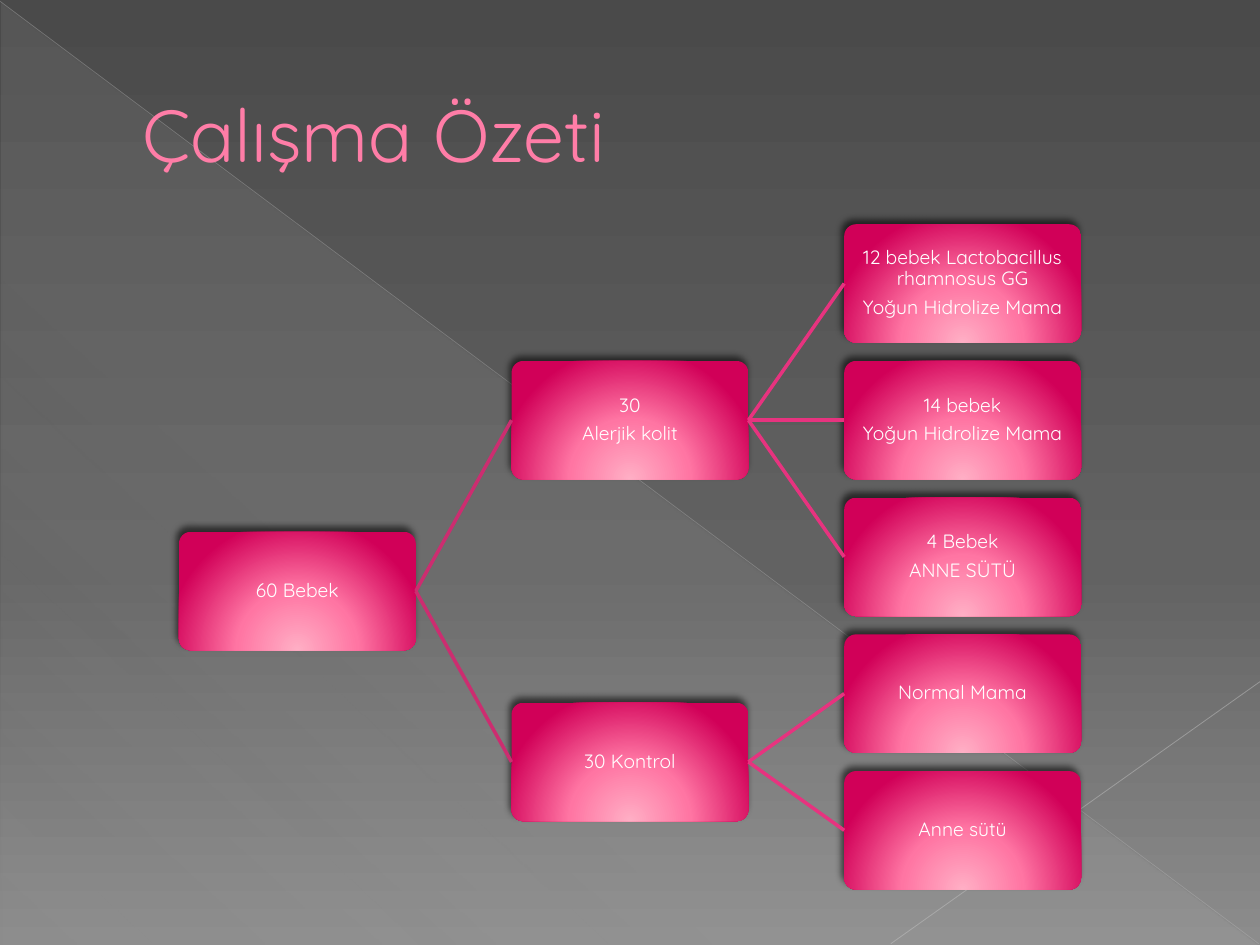
from dataclasses import dataclass

from lxml import etree
from pptx import Presentation, util as u
from pptx.dml.color import RGBColor
from pptx.enum import shapes, text
from pptx.oxml import ns


@dataclass(frozen=True)
class Theme:
    font: str = "Quicksand"
    title_size: float = 42
    box_size: float = 11
    title: str = "FF7DA7"
    title_edge: str = "B12761"
    box_text: str = "FFFFFF"
    shadow: str = "000000"
    link_colors: tuple = ("CC2D70", "E7337F")
    backdrop: tuple = ((0, "4A4A4A", 100), (60, "626262", 100), (100, "8C8C8C", 100))
    veil: tuple = ((0, "D2D2D2", 10), (70, "D2D2D2", 8), (100, "D2D2D2", 1))
    box: tuple = ((0, "FFAFC5", 100), (46, "FF75A3", 100), (100, "D10058", 100))


@dataclass(frozen=True)
class Node:
    lines: tuple
    children: tuple = ()
    leaf_row: float = 0

    @property
    def row(self) -> float:
        if not self.children:
            return self.leaf_row
        return sum(child.row for child in self.children) / len(self.children)


THEME = Theme()
BOX_WIDTH, BOX_HEIGHT = 1.88, 0.94
LEFT, TOP = 1.42, 1.78
COLUMN_STEP, ROW_STEP = 2.64, 1.085

TREE = Node(("60 Bebek",), (
    Node(("30", "Alerjik kolit"), (
        Node(("12 bebek Lactobacillus rhamnosus GG", "Yoğun Hidrolize Mama"), leaf_row=0),
        Node(("14 bebek", "Yoğun Hidrolize Mama"), leaf_row=1),
        Node(("4 Bebek", "ANNE SÜTÜ"), leaf_row=2),
    )),
    Node(("30 Kontrol",), (
        Node(("Normal Mama",), leaf_row=3),
        Node(("Anne sütü",), leaf_row=4),
    )),
))


def add_element(parent, tag: str, **attributes):
    element = etree.SubElement(parent, ns.qn(tag))
    for name, value in attributes.items():
        element.set(name, str(value))
    return element


def add_color(parent, color: str, opacity: float = 100):
    element = add_element(parent, "a:srgbClr", val=color)
    if opacity < 100:
        add_element(element, "a:alpha", val=int(opacity * 1000))


def paint_gradient(fill, properties, stops: tuple, angle: float | None = None):
    fill.solid()
    plain = properties.find(ns.qn("a:solidFill"))
    gradient = etree.Element(ns.qn("a:gradFill"), rotWithShape="1")
    stop_list = add_element(gradient, "a:gsLst")
    for position, color, opacity in stops:
        add_color(add_element(stop_list, "a:gs", pos=position * 1000), color, opacity)
    if angle is None:
        circle = add_element(gradient, "a:path", path="circle")
        add_element(circle, "a:fillToRect", l=50000, t=155000, r=50000, b=-55000)
    else:
        add_element(gradient, "a:lin", ang=int(angle * 60000), scaled=0)
    properties.replace(plain, gradient)


def add_line(page, start: tuple, end: tuple, color: str, width: float, opacity: float = 100):
    line = page.shapes.add_connector(
        shapes.MSO_CONNECTOR.STRAIGHT, *map(u.Inches, start + end))
    line.line.color.rgb = RGBColor.from_string(color)
    line.line.width = u.Pt(width)
    properties = line.element.spPr
    if opacity < 100:
        swatch = properties.find(".//" + ns.qn("a:srgbClr"))
        add_element(swatch, "a:alpha", val=int(opacity * 1000))
    add_element(properties, "a:effectLst")
    return line


def add_span(para, words: str, size: float, color: str):
    span = para.add_run()
    span.text = words
    span.font.name = THEME.font
    span.font.size = u.Pt(size)
    span.font.color.rgb = RGBColor.from_string(color)
    return span


def draw_backdrop(page):
    fill = page.background.fill
    fill.solid()
    paint_gradient(fill, page.element.find(".//" + ns.qn("p:bgPr")), THEME.backdrop, 90)
    veil = page.shapes.add_shape(
        shapes.MSO_SHAPE.RIGHT_TRIANGLE,
        u.Inches(0.01), u.Inches(0.02), u.Inches(9.98), u.Inches(7.48))
    veil.shadow.inherit = False
    veil.line.fill.background()
    paint_gradient(veil.fill, veil.element.spPr, THEME.veil, 133)
    add_line(page, (0, 0.01), (9.99, 7.49), "BFBFBF", 0.39, 35)
    add_line(page, (10, 5.41), (7.07, 7.49), "C6C6C6", 0.47, 45)


def draw_title(page, words: str):
    box = page.shapes.add_textbox(u.Inches(0.5), u.Inches(0.29), u.Inches(9), u.Inches(1.53))
    frame = box.text_frame
    frame.word_wrap = True
    frame.vertical_anchor = text.MSO_ANCHOR.MIDDLE
    frame.margin_left = u.Inches(0.63)
    span = add_span(frame.paragraphs[0], words, THEME.title_size, THEME.title)
    edge = etree.Element(ns.qn("a:ln"), w=str(u.Pt(0.5)))
    add_color(add_element(edge, "a:solidFill"), THEME.title_edge)
    span.font.fill
    span.font._element.insert(0, edge)


def draw_box(page, node: Node, level: int):
    box = page.shapes.add_shape(
        shapes.MSO_SHAPE.ROUNDED_RECTANGLE,
        u.Inches(LEFT + level * COLUMN_STEP), u.Inches(TOP + node.row * ROW_STEP),
        u.Inches(BOX_WIDTH), u.Inches(BOX_HEIGHT))
    box.adjustments[0] = 0.1
    box.line.fill.background()
    paint_gradient(box.fill, box.element.spPr, THEME.box)
    box.shadow.inherit = False
    effects = box.element.spPr.find(ns.qn("a:effectLst"))
    shadow = add_element(effects, "a:outerShdw", blurRad=u.Pt(4), dist=u.Pt(3),
                         dir=245 * 60000, rotWithShape=0)
    add_color(shadow, THEME.shadow, 60)
    frame = box.text_frame
    frame.word_wrap = True
    frame.vertical_anchor = text.MSO_ANCHOR.MIDDLE
    frame.margin_left = frame.margin_right = u.Inches(0.01)
    frame.margin_top = frame.margin_bottom = u.Inches(0.01)
    for index, words in enumerate(node.lines):
        para = frame.add_paragraph() if index else frame.paragraphs[0]
        para.alignment = text.PP_ALIGN.CENTER
        para.line_spacing = 0.9
        para.space_after = u.Pt(4.5)
        add_span(para, words, THEME.box_size, THEME.box_text)
    return box


def draw_tree(page, node: Node, level: int = 0):
    box = draw_box(page, node, level)
    for child in node.children:
        child_box = draw_tree(page, child, level + 1)
        link = add_line(page, (0, 0), (1, 1), THEME.link_colors[level], 2)
        link.begin_connect(box, 3)
        link.end_connect(child_box, 1)
    return box


def main():
    deck = Presentation()
    deck.slide_width, deck.slide_height = u.Inches(10), u.Inches(7.5)
    page = deck.slides.add_slide(deck.slide_layouts[6])
    draw_backdrop(page)
    draw_title(page, "Çalışma Özeti")
    draw_tree(page, TREE)
    deck.save("out.pptx")


if __name__ == "__main__":
    main()
